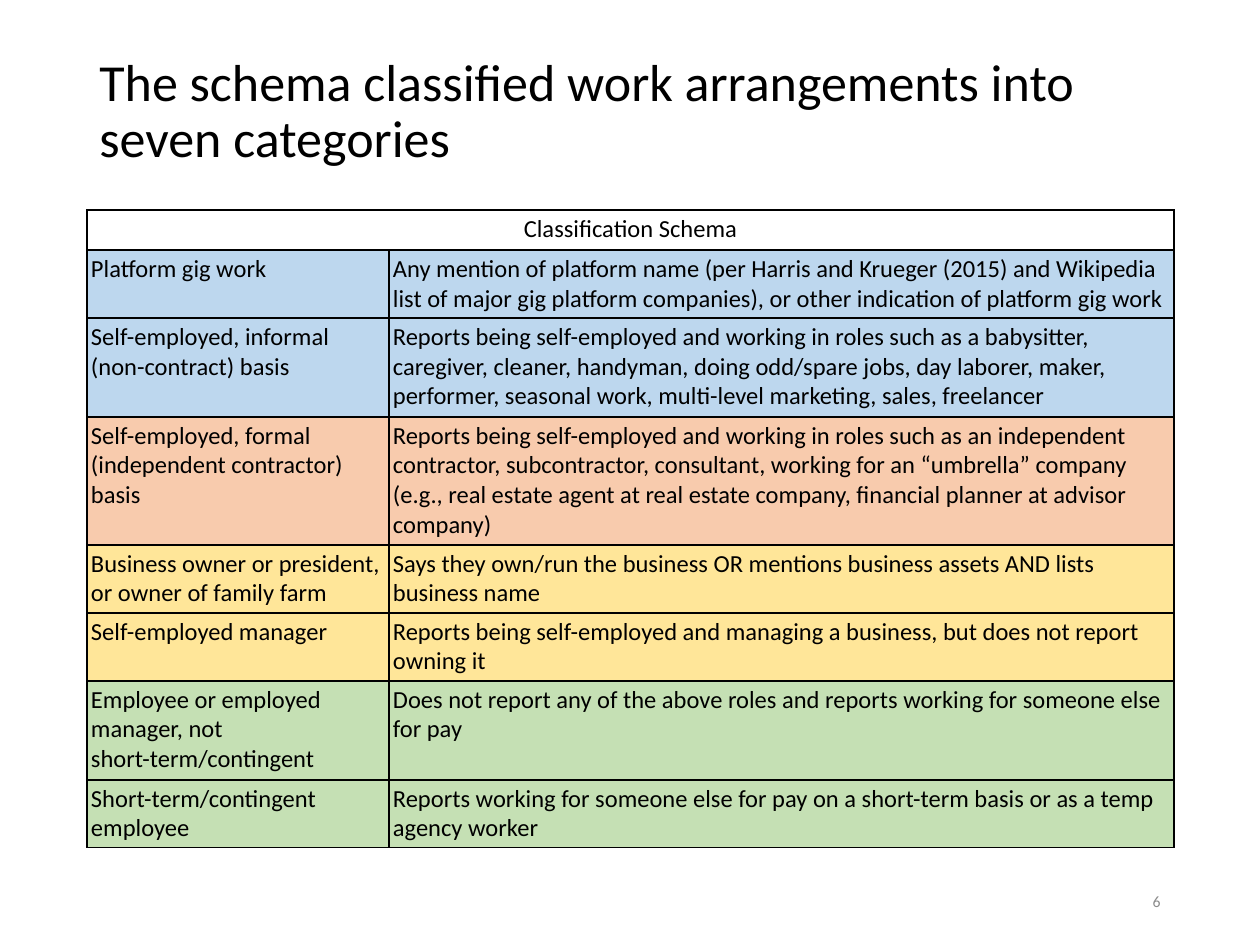
from lxml import etree
from pptx import Presentation
from pptx.dml.color import RGBColor
from pptx.enum.text import MSO_ANCHOR, PP_ALIGN
from pptx.oxml.ns import qn
from pptx.util import Pt

PX = 914400 / 126
FONT = "Calibri"
LEFT, RIGHT = PP_ALIGN.LEFT, PP_ALIGN.RIGHT
CENTER = PP_ALIGN.CENTER
TOP, MIDDLE = MSO_ANCHOR.TOP, MSO_ANCHOR.MIDDLE
COLORS = {
    "text": "000000",
    "number": "8C8C8C",
    "header": "FFFFFF",
    "informal": "BDD7EE",
    "formal": "F8CBAD",
    "business": "FFE699",
    "employee": "C5E0B4",
}


def px(value):
    return round(value * PX)


def write(frame, text, size, color="text", align=LEFT):
    frame.word_wrap = True
    paragraph = frame.paragraphs[0]
    paragraph.alignment = align
    run = paragraph.add_run()
    run.text = text
    run.font.name = FONT
    run.font.size = Pt(size)
    run.font.bold = False
    run.font.color.rgb = RGBColor.from_string(COLORS[color])
    return paragraph


presentation = Presentation()
presentation.slide_width = px(1260)
presentation.slide_height = px(945)
slide = presentation.slides.add_slide(presentation.slide_layouts[6])

# Title
title = slide.shapes.add_textbox(px(87), px(50), px(1086), px(183))
title.text_frame.vertical_anchor = TOP
heading = write(
    title.text_frame,
    "The schema classified work arrangements into seven categories",
    29.7,
)
heading.line_spacing = 0.9

# Slide number
number = slide.shapes.add_textbox(px(890), px(876), px(283), px(50))
number.text_frame.vertical_anchor = MIDDLE
write(number.text_frame, "6", 9, "number", RIGHT)

# Classification table: row height, fill, category, criteria
rows = [
    (40, "header", "Classification Schema", ""),
    (68, "informal", "Platform gig work",
     "Any mention of platform name (per Harris and Krueger (2015) and Wikipedia "
     "list of major gig platform companies), or other indication of platform gig work"),
    (99, "informal", "Self-employed, informal (non-contract) basis",
     "Reports being self-employed and working in roles such as a babysitter, "
     "caregiver, cleaner, handyman, doing odd/spare jobs, day laborer, maker, "
     "performer, seasonal work, multi-level marketing, sales, freelancer"),
    (128, "formal", "Self-employed, formal (independent contractor) basis",
     "Reports being self-employed and working in roles such as an independent "
     "contractor, subcontractor, consultant, working for an “umbrella” company "
     "(e.g., real estate agent at real estate company, financial planner at advisor "
     "company)"),
    (68, "business", "Business owner or president, or owner of family farm",
     "Says they own/run the business OR mentions business assets AND lists "
     "business name"),
    (68, "business", "Self-employed manager",
     "Reports being self-employed and managing a business, but does not report "
     "owning it"),
    (99, "employee", "Employee or employed manager, not short-term/contingent",
     "Does not report any of the above roles and reports working for someone else "
     "for pay"),
    (68, "employee", "Short-term/contingent employee",
     "Reports working for someone else for pay on a short-term basis or as a temp "
     "agency worker"),
]
column_widths = [302, 785]
table = slide.shapes.add_table(
    len(rows), len(column_widths), px(87), px(210),
    px(sum(column_widths)), px(sum(row[0] for row in rows)),
).table
table.first_row = False
table.horz_banding = False
for column, width in zip(table.columns, column_widths):
    column.width = px(width)
table.cell(0, 0).merge(table.cell(0, 1))

for row_index, (height, fill, *texts) in enumerate(rows):
    table.rows[row_index].height = px(height)
    for column_index, text in enumerate(texts):
        cell = table.cell(row_index, column_index)
        cell.margin_left = cell.margin_right = px(4)
        cell.margin_top = cell.margin_bottom = px(4)
        cell.vertical_anchor = TOP
        if text:
            align = CENTER if row_index == 0 else LEFT
            write(cell.text_frame, text, 14, align=align)

        properties = cell._tc.get_or_add_tcPr()
        for side in ("a:lnL", "a:lnR", "a:lnT", "a:lnB"):
            border = etree.SubElement(properties, qn(side), w=str(Pt(1)))
            solid = etree.SubElement(border, qn("a:solidFill"))
            etree.SubElement(solid, qn("a:srgbClr"), val=COLORS["text"])
        cell.fill.solid()
        cell.fill.fore_color.rgb = RGBColor.from_string(COLORS[fill])

presentation.save("out.pptx")
